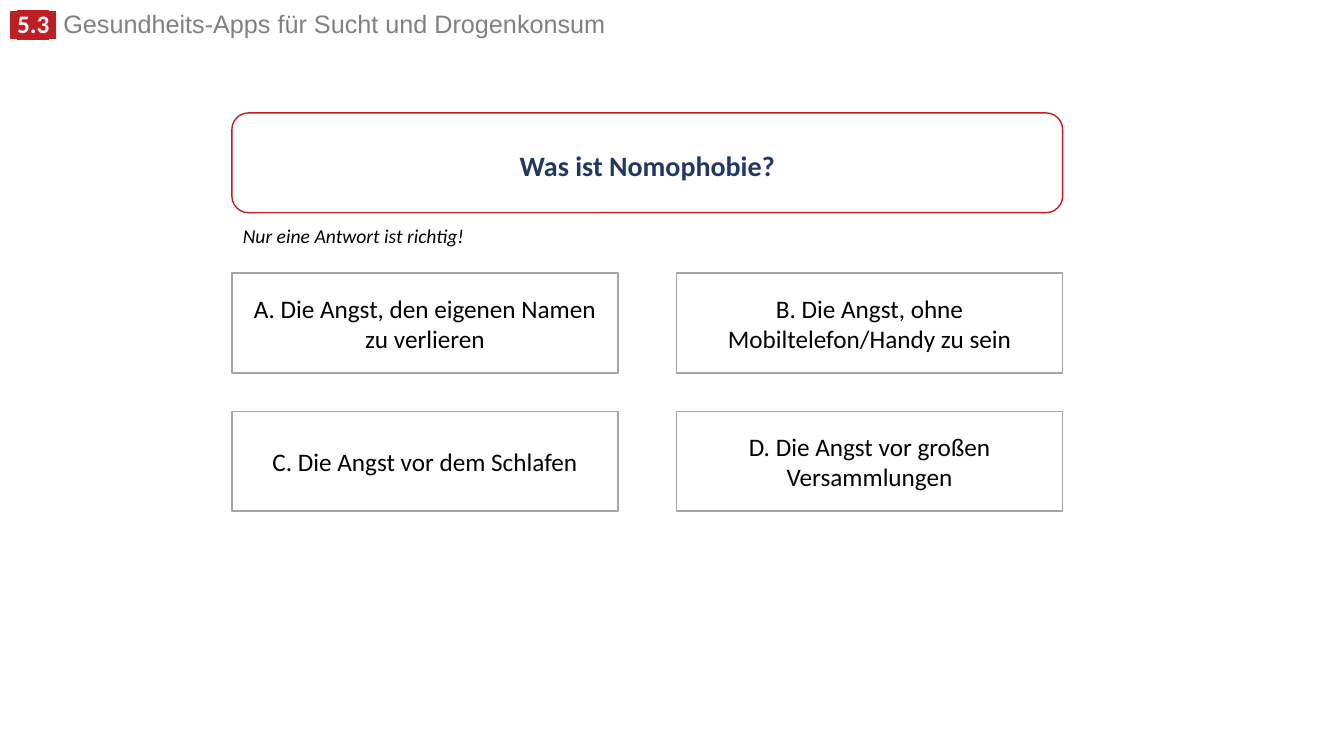
import pptx
import pptx.util
import lxml.etree
from pptx.dml.color import RGBColor
from pptx.enum.shapes import MSO_SHAPE
from pptx.enum.text import MSO_ANCHOR, MSO_AUTO_SIZE, PP_ALIGN
from pptx.oxml.ns import qn

THEME = {
    "red": "C01E24", "navy": "203864", "gray": "808080", "border": "A5A5A5",
    "white": "FFFFFF", "black": "000000",
    "heading": 18, "question": 20, "answer": 18, "note": 14,
}
Inches = pptx.util.Inches

# Grid of the quiz: two columns, two rows of answers
LEFT, TOP = 2.3, 2.71
COLUMN_STEP, ROW_STEP = 4.41, 1.37
BOX_WIDTH, BOX_HEIGHT = 3.83, 0.99


def style(span, size, color, name="Calibri", bold=False, italic=False):
    font = span.font
    font.size = pptx.util.Pt(THEME[size])
    font.color.rgb = RGBColor.from_string(THEME[color])
    font.name = name
    font.bold = bold
    font.italic = italic


def add_card(page, preset, left, top, width, border, text):
    card = page.shapes.add_shape(
        preset, Inches(left), Inches(top), Inches(width), Inches(BOX_HEIGHT))
    card.shadow.inherit = False
    card.fill.solid()
    card.fill.fore_color.rgb = RGBColor.from_string(THEME["white"])
    card.line.color.rgb = RGBColor.from_string(THEME[border])
    card.line.width = pptx.util.Pt(1)
    card.text_frame.text = text
    card.text_frame.word_wrap = True
    card.text_frame.vertical_anchor = MSO_ANCHOR.MIDDLE
    para = card.text_frame.paragraphs[0]
    para.alignment = PP_ALIGN.CENTER
    return para


deck = pptx.Presentation()
deck.slide_width, deck.slide_height = Inches(13.33), Inches(7.5)
page = deck.slides.add_slide(deck.slide_layouts[5])

# Chapter heading with highlighted number
title = page.shapes.title
title.left, title.top = Inches(0), Inches(0.09)
title.width, title.height = Inches(9.52), Inches(0.35)
title.text_frame.auto_size = MSO_AUTO_SIZE.NONE
title.text_frame.vertical_anchor = MSO_ANCHOR.TOP
para = title.text_frame.paragraphs[0]
para.alignment = PP_ALIGN.LEFT
para.line_spacing = 0.8
for text, name in ((" ", "Arial"), ("5.3", "Calibri"), (" ", "Arial")):
    span = para.add_run()
    span.text = text
    style(span, "heading", "white", name, bold=True)
    highlight = lxml.etree.Element(qn("a:highlight"))
    lxml.etree.SubElement(highlight, qn("a:srgbClr"), val=THEME["red"])
    span.font._element.find(qn("a:solidFill")).addnext(highlight)
span = para.add_run()
span.text = " Gesundheits-Apps für Sucht und Drogenkonsum"
style(span, "heading", "gray", "Arial")

# Question
question = add_card(page, MSO_SHAPE.ROUNDED_RECTANGLE, LEFT, 1.12,
                    COLUMN_STEP + BOX_WIDTH, "red", "Was ist Nomophobie?")
question.line_spacing = 1.15
style(question.runs[0], "question", "navy", bold=True)

# Answers
answers = (
    "A. Die Angst, den eigenen Namen zu verlieren",
    "B. Die Angst, ohne Mobiltelefon/Handy zu sein",
    "C. Die Angst vor dem Schlafen",
    "D. Die Angst vor großen Versammlungen",
)
for index, text in enumerate(answers):
    row, column = divmod(index, 2)
    answer = add_card(page, MSO_SHAPE.RECTANGLE, LEFT + column * COLUMN_STEP,
                      TOP + row * ROW_STEP, BOX_WIDTH, "border", text)
    style(answer.runs[0], "answer", "black")

# Note under the question
note = page.shapes.add_textbox(Inches(2.31), Inches(2.17), Inches(2.42), Inches(0.34))
note.text_frame.text = "Nur eine Antwort ist richtig!"
note.text_frame.word_wrap = False
note.text_frame.auto_size = MSO_AUTO_SIZE.SHAPE_TO_FIT_TEXT
style(note.text_frame.paragraphs[0].runs[0], "note", "black", italic=True)

deck.save("out.pptx")
